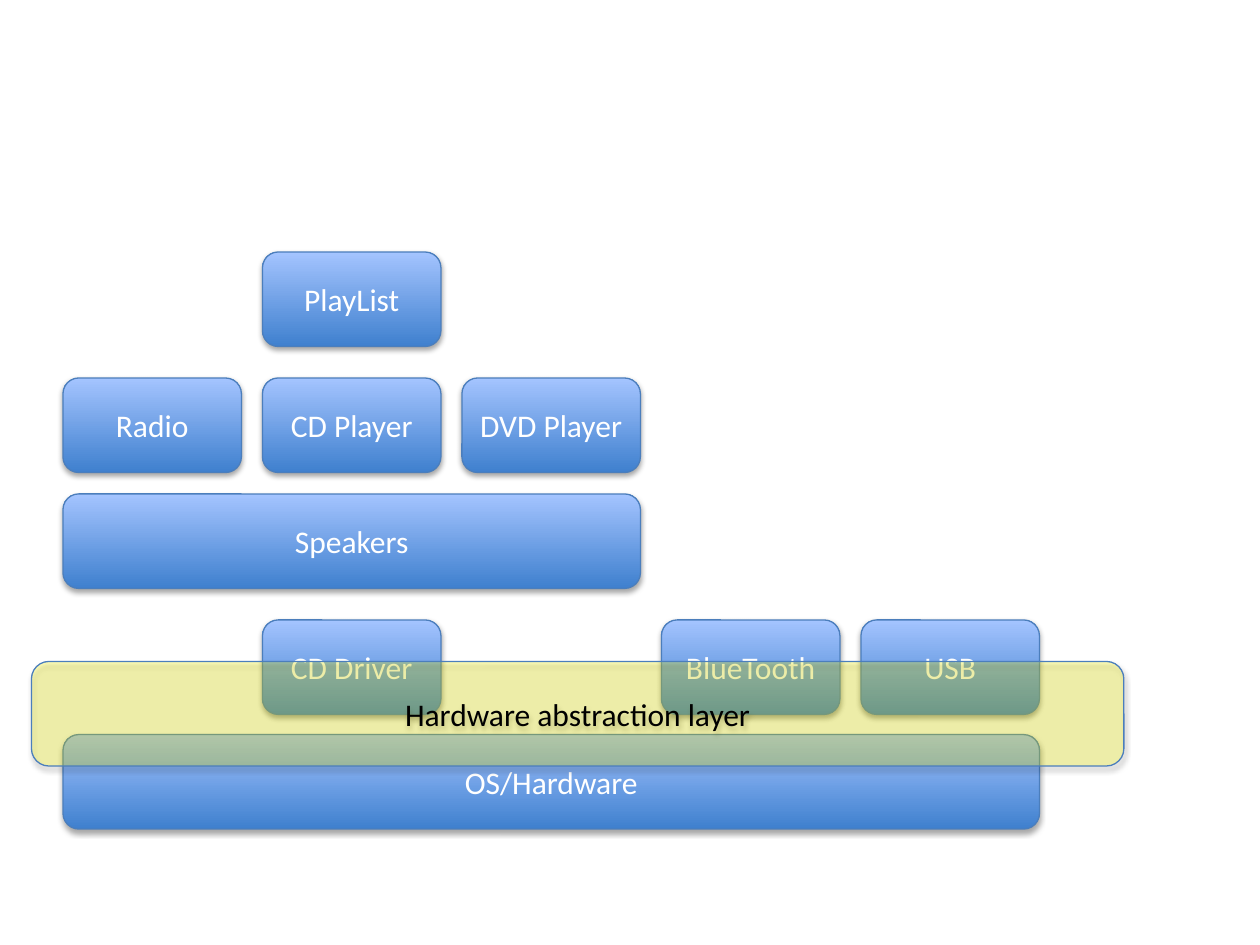
"""Builds the layered architecture slide of a media player."""
from dataclasses import dataclass

import lxml.etree
import pptx
import pptx.dml.color
import pptx.enum.shapes
import pptx.enum.text
import pptx.oxml.ns
import pptx.util

Inches = pptx.util.Inches
Pt = pptx.util.Pt
qn = pptx.oxml.ns.qn


@dataclass(frozen=True)
class Theme:
    font: str = "Calibri"
    size: float = 18
    outline_width: float = 0.75
    outline: str = "4B7EBC"
    block_top: str = "A4C4FF"
    block_bottom: str = "3F80CE"
    block_text: str = "FFFFFF"
    overlay: str = "FFFF00"
    overlay_opacity: int = 27
    overlay_text: str = "000000"
    shadow: str = "000000"
    shadow_opacity: int = 35
    shadow_blur: float = 3.15
    shadow_distance: float = 1.81


THEME = Theme()
LEFT = 0.5
BLOCK_WIDTH = 17 / 12
BLOCK_HEIGHT = 0.75
GAP = 1 / 6

# label, column, columns spanned, top
BLOCKS = [
    ("Radio", 0, 1, 3),
    ("CD Player", 1, 1, 3),
    ("DVD Player", 2, 1, 3),
    ("Speakers", 0, 3, 3.92),
    ("BlueTooth", 3, 1, 4.92),
    ("USB", 4, 1, 4.92),
    ("PlayList", 1, 1, 2),
    ("OS/Hardware", 0, 5, 5.83),
    ("CD Driver", 1, 1, 4.92),
]


def rgb(value):
    return pptx.dml.color.RGBColor.from_string(value)


def add_alpha(color_element, percent):
    alpha = lxml.etree.SubElement(color_element, qn("a:alpha"))
    alpha.set("val", str(percent * 1000))


def add_shadow(shape):
    shape.shadow.inherit = False
    effects = shape._element.spPr.find(qn("a:effectLst"))
    shadow = lxml.etree.SubElement(effects, qn("a:outerShdw"))
    shadow.set("blurRad", str(int(Pt(THEME.shadow_blur))))
    shadow.set("dist", str(int(Pt(THEME.shadow_distance))))
    shadow.set("dir", str(90 * 60000))
    shadow.set("rotWithShape", "0")
    color = lxml.etree.SubElement(shadow, qn("a:srgbClr"))
    color.set("val", THEME.shadow)
    add_alpha(color, THEME.shadow_opacity)


def add_rounded_box(page, label, left, top, width, height, text_color):
    box = page.shapes.add_shape(
        pptx.enum.shapes.MSO_SHAPE.ROUNDED_RECTANGLE,
        Inches(left), Inches(top), Inches(width), Inches(height))
    box.line.color.rgb = rgb(THEME.outline)
    box.line.width = Pt(THEME.outline_width)
    add_shadow(box)
    frame = box.text_frame
    frame.word_wrap = True
    frame.vertical_anchor = pptx.enum.text.MSO_ANCHOR.MIDDLE
    para = frame.paragraphs[0]
    para.alignment = pptx.enum.text.PP_ALIGN.CENTER
    span = para.add_run()
    span.text = label
    span.font.name = THEME.font
    span.font.size = Pt(THEME.size)
    span.font.color.rgb = rgb(text_color)
    return box


def add_block(page, label, column, columns, top):
    pitch = BLOCK_WIDTH + GAP
    box = add_rounded_box(page, label, LEFT + column * pitch, top,
                          columns * pitch - GAP, BLOCK_HEIGHT, THEME.block_text)
    box.fill.gradient()
    box.fill.gradient_angle = 90
    for stop, color in zip(box.fill.gradient_stops, (THEME.block_bottom, THEME.block_top)):
        stop.color.rgb = rgb(color)


def add_overlay(page, label, left, top, width, height):
    box = add_rounded_box(page, label, left, top, width, height, THEME.overlay_text)
    box.fill.solid()
    box.fill.fore_color.rgb = rgb(THEME.overlay)
    fill = box._element.spPr.find(qn("a:solidFill"))
    add_alpha(fill.find(qn("a:srgbClr")), THEME.overlay_opacity)


def main():
    deck = pptx.Presentation()
    deck.slide_width, deck.slide_height = Inches(10), Inches(7.5)
    page = deck.slides.add_slide(deck.slide_layouts.get_by_name("Blank"))
    for block in BLOCKS:
        add_block(page, *block)
    add_overlay(page, "Hardware abstraction layer", 0.25, 5.25, 8.67, 0.83)
    deck.save("out.pptx")


if __name__ == "__main__":
    main()
